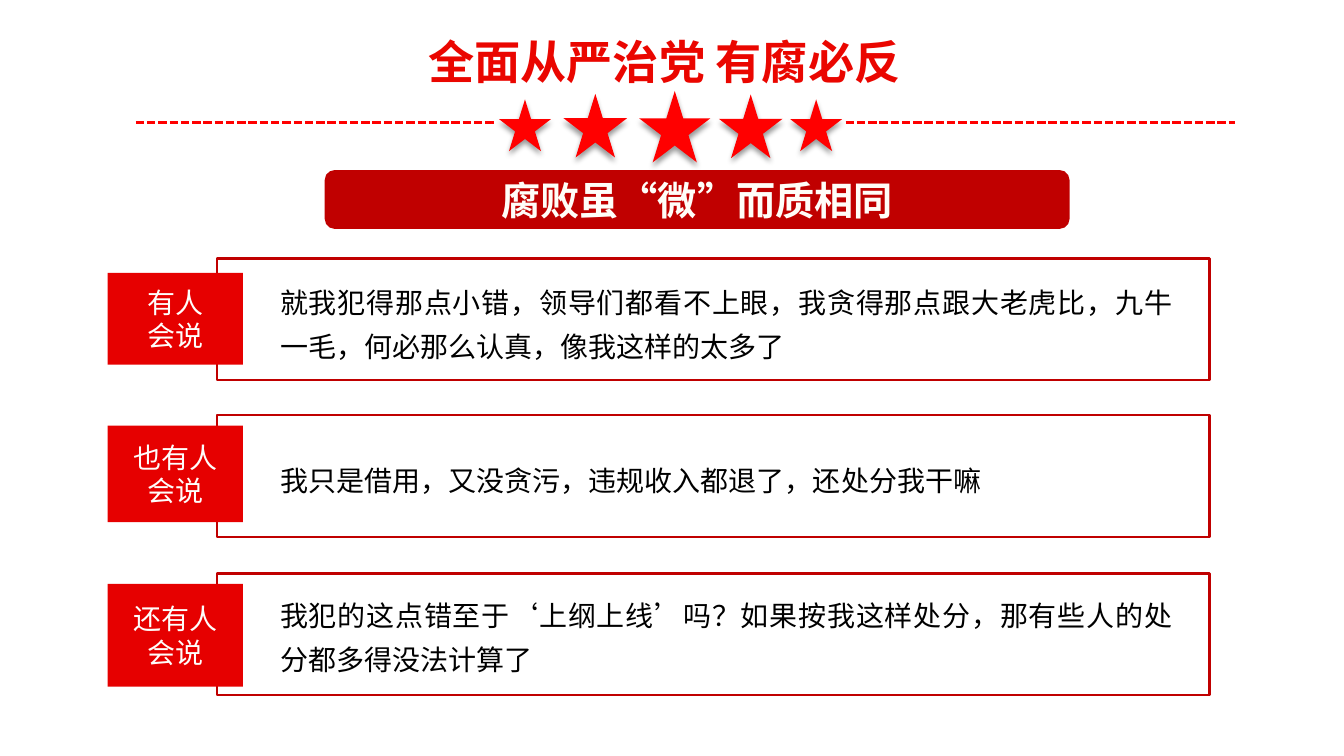
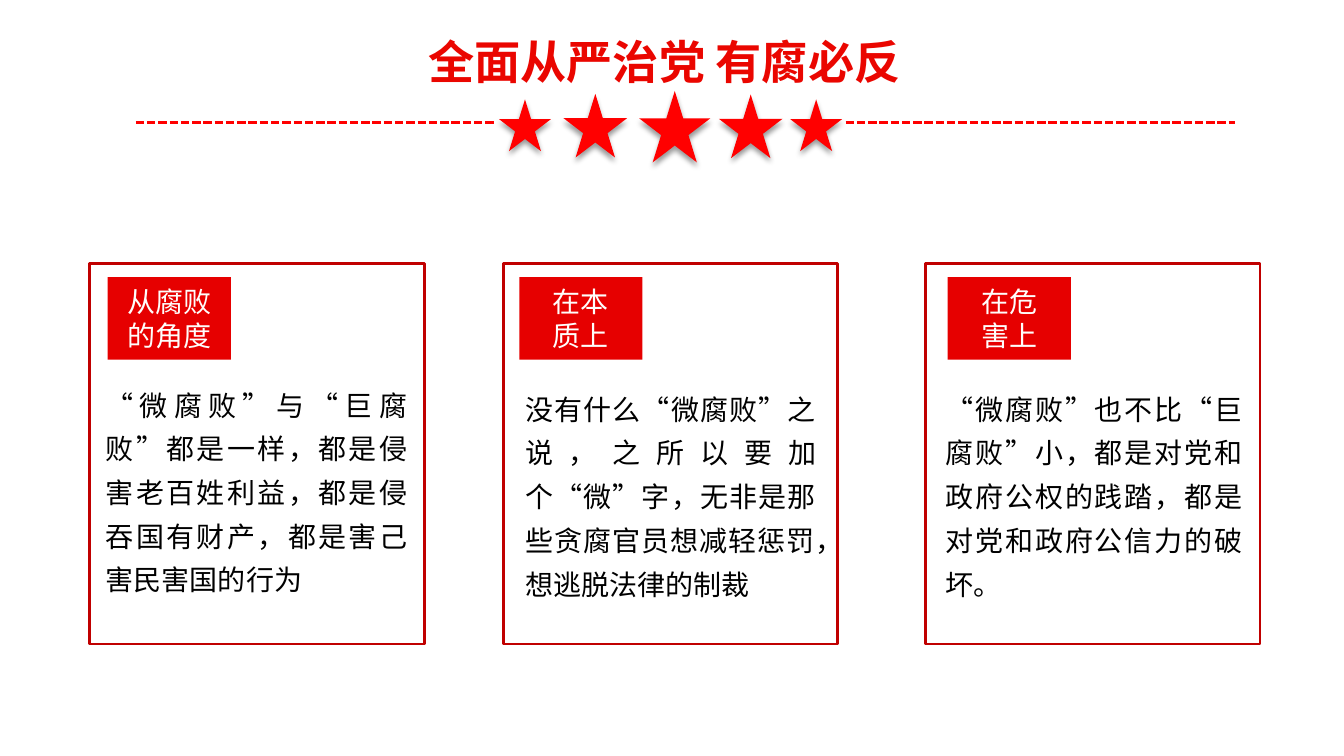
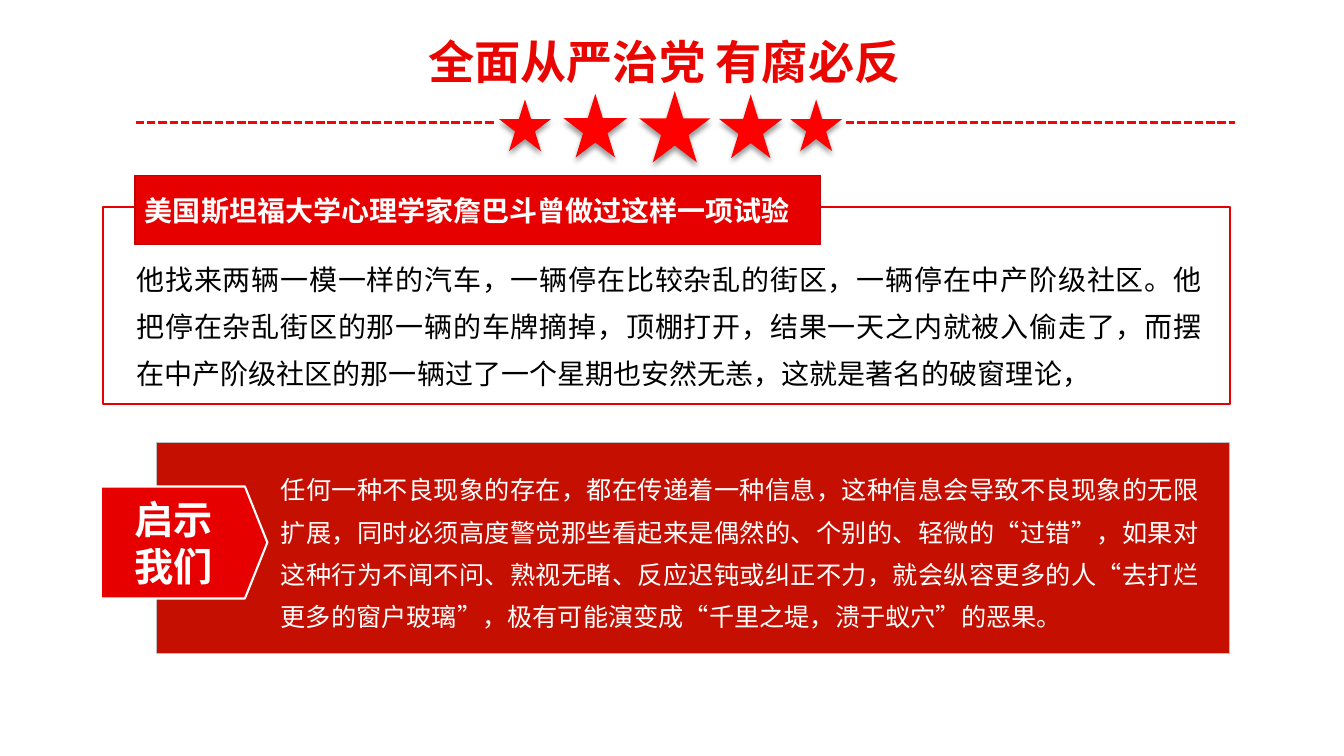
from pptx import Presentation
from pptx.util import Pt
from pptx.dml.color import RGBColor
from pptx.enum.dml import MSO_LINE
from pptx.enum.shapes import MSO_CONNECTOR, MSO_SHAPE as SHAPE
from pptx.enum.text import MSO_ANCHOR as ANCHOR, MSO_AUTO_SIZE as FIT, PP_ALIGN as ALIGN
from pptx.oxml import parse_xml
from pptx.oxml.ns import nsdecls, qn
from pptx.oxml.xmlchemy import OxmlElement

FONT = "Noto Sans CJK SC"
RED, DEEP, STAR, CREAM = "E60000", "C00000", "FF0000", "FFFDFB"
WHITE, BLACK = "FFFFFF", "000000"
LEADING = 1.2
TITLE = "全面从严治党 有腐必反"
TITLE_BOX = (289.5, 20, 370, 47.5)
STARS = [(356.5, 71, 37), (402.5, 67, 45.5), (456.5, 65, 51), (513.5, 67.5, 45.5), (564.5, 71, 37)]
DASHES = [(97, 354), (604, 882.5)]
DASH_Y = 87.75

VIEWS = [
    (184.5, 195, 65.5, 193.5, ["有人", "会说"],
     "就我犯得那点小错，领导们都看不上眼，我贪得那点跟大老虎比，九牛一毛，何必那么认真，像我这样的太多了"),
    (296.5, 304, 69, 320.5, ["也有人", "会说"],
     "我只是借用，又没贪污，违规收入都退了，还处分我干嘛"),
    (409.5, 417, 73.5, 417, ["还有人", "会说"],
     "我犯的这点错至于‘上纲上线’吗？如果按我这样处分，那有些人的处分都多得没法计算了"),
]
ASPECTS = [
    (64, 13, 4.5, 78, 229.5, ["从腐败的角度"],
     "“微腐败”与“巨腐败”都是一样，都是侵害老百姓利益，都是侵吞国有财产，都是害己害民害国的行为"),
    (359.5, 11.5, 8.5, 81, 222, ["在本", "质上"],
     "没有什么“微腐败”之说，之所以要加个“微”字，无非是那些贪腐官员想减轻惩罚，想逃脱法律的制裁"),
    (661, 16, 7.5, 81, 226, ["在危", "害上"],
     "“微腐败”也不比“巨腐败”小，都是对党和政府公权的践踏，都是对党和政府公信力的破坏。"),
]
TRIAL_HEAD = "美国斯坦福大学心理学家詹巴斗曾做过这样一项试验"
TRIAL = ("他找来两辆一模一样的汽车，一辆停在比较杂乱的街区，一辆停在中产阶级社区。"
         "他把停在杂乱街区的那一辆的车牌摘掉，顶棚打开，结果一天之内就被入偷走了，"
         "而摆在中产阶级社区的那一辆过了一个星期也安然无恙，这就是著名的破窗理论，")
LESSON = ("任何一种不良现象的存在，都在传递着一种信息，这种信息会导致不良现象的无限扩展，"
          "同时必须高度警觉那些看起来是偶然的、个别的、轻微的“过错”，"
          "如果对这种行为不闻不问、熟视无睹、反应迟钝或纠正不力，"
          "就会纵容更多的人“去打烂更多的窗户玻璃”，极有可能演变成“千里之堤，溃于蚁穴”的恶果。")


def rgb(color):
    return RGBColor.from_string(color)


def put(target, **values):
    for name, value in values.items():
        setattr(target, name, value)


def write(tf, lines, size, color, bold=False, align=ALIGN.CENTER, spacing=1, anchor=ANCHOR.MIDDLE):
    put(tf, word_wrap=True, auto_size=FIT.NONE, vertical_anchor=anchor,
        margin_left=Pt(7.2), margin_right=Pt(7.2), margin_top=Pt(3.6), margin_bottom=Pt(3.6))
    for i, line in enumerate(lines):
        p = tf.add_paragraph() if i else tf.paragraphs[0]
        put(p, alignment=align, line_spacing=Pt(round(size * LEADING * spacing, 1)))
        r = p.add_run()
        r.text = line
        put(r.font, name=FONT, size=Pt(size), bold=bold)
        r.font.color.rgb = rgb(color)
        rPr = r.font._element
        rPr.set("lang", "zh-CN")
        ea = OxmlElement("a:ea")
        ea.set("typeface", FONT)
        rPr.find(qn("a:latin")).addnext(ea)


def add_box(s, box, fill=None, line=None, width=1, kind=SHAPE.RECTANGLE):
    sp = s.shapes.add_shape(kind, *map(Pt, box))
    if fill:
        sp.fill.solid()
        sp.fill.fore_color.rgb = rgb(fill)
    else:
        sp.fill.background()
    if line:
        sp.line.color.rgb = rgb(line)
        sp.line.width = Pt(width)
    else:
        sp.line.fill.background()
    sp.shadow.inherit = False
    return sp


def add_prose(s, box, text, size=20, color=BLACK, spacing=1.3):
    tb = s.shapes.add_textbox(*map(Pt, box))
    write(tb.text_frame, [text], size, color, align=ALIGN.JUSTIFY, spacing=spacing, anchor=ANCHOR.TOP)


def add_badge(s, box, lines):
    write(add_box(s, box, RED).text_frame, lines, 20, CREAM)


def add_star(s, x, y, size):
    sp = add_box(s, (x, y, size, size), STAR, kind=SHAPE.STAR_5_POINT)
    sp.element.spPr.find(qn("a:effectLst")).append(parse_xml(
        f'<a:outerShdw {nsdecls("a")} blurRad="50800" dist="38100" dir="5400000" rotWithShape="0">'
        '<a:srgbClr val="000000"><a:alpha val="40000"/></a:srgbClr></a:outerShdw>'))
    return sp


def add_dashes(s, x1, x2):
    cn = s.shapes.add_connector(MSO_CONNECTOR.STRAIGHT, Pt(x1), Pt(DASH_Y), Pt(x2), Pt(DASH_Y))
    put(cn.line, width=Pt(2), dash_style=MSO_LINE.SQUARE_DOT)
    cn.line.color.rgb = rgb(STAR)
    cn.element.spPr.append(OxmlElement("a:effectLst"))
    return cn


def dress_layout(layout, s):
    for ph in list(layout.placeholders):
        if ph.placeholder_format.idx:
            ph.element.getparent().remove(ph.element)
        else:
            put(ph, **dict(zip(("left", "top", "width", "height"), map(Pt, TITLE_BOX))))
    band = [add_dashes(s, *ends) for ends in DASHES] + [add_star(s, *star) for star in STARS]
    for sp in band:
        layout.shapes.element.append(sp.element)


def add_title(s):
    write(s.shapes.title.text_frame, [TITLE], 33, "EA0600", bold=True)


def views_slide(s):
    banner = add_box(s, (232, 121.5, 532, 42), DEEP, kind=SHAPE.ROUNDED_RECTANGLE)
    write(banner.text_frame, ["腐败虽“微”而质相同"], 28, "FFFDF8", bold=True)
    for top, badge_top, badge_height, text_top, label, text in VIEWS:
        add_box(s, (155, top, 709, 87), line=DEEP, width=1.75)
        add_prose(s, (193, text_top, 651.5, 70), text)
        add_badge(s, (77, badge_top, 96.5, badge_height), label)


def aspects_slide(s):
    top = 188.5
    for left, badge_dx, text_dx, text_dy, text_width, label, text in ASPECTS:
        add_box(s, (left, top, 239, 271.5), line=DEEP, width=2)
        add_badge(s, (left + badge_dx, top + 9.5, 88, 59), label)
        add_prose(s, (left + text_dx, top + text_dy, text_width, 164), text)


def trial_panel(s, x, y, w, h):
    add_box(s, (x, y, w, h), line=RED, width=1.5)
    head = add_box(s, (x + 23, y - 22.5, 489.5, 49), RED, DEEP)
    write(head.text_frame, [TRIAL_HEAD], 20, WHITE, bold=True, align=ALIGN.LEFT)
    add_prose(s, (x + 17, y + 26.5, w - 30, 109), TRIAL, spacing=1.4)


def lesson_panel(s, x, y, w, h):
    add_box(s, (x, y, w, h), "C50F00", "BFBFBF", 0.75)
    tag = add_box(s, (x - 40, y + 31.5, 119, 80), RED, WHITE, 1.5, SHAPE.PENTAGON)
    tag.adjustments[0] = 0.2
    write(tag.text_frame, ["启示", "我们"], 28, WHITE, bold=True)
    tag.text_frame.margin_right = Pt(14)
    add_prose(s, (x + 81.5, y + 11, 670, 127), LESSON, 18, WHITE, 1.4)


def experiment_slide(s):
    trial_panel(s, 73.5, 148, 805, 140.5)
    lesson_panel(s, 112, 316, 766, 151)


def main():
    prs = Presentation()
    put(prs, slide_width=Pt(960), slide_height=Pt(540))
    layout = prs.slide_layouts[5]
    for i, build in enumerate((views_slide, aspects_slide, experiment_slide)):
        s = prs.slides.add_slide(layout)
        if i == 0:
            dress_layout(layout, s)
        add_title(s)
        build(s)
    prs.save("out.pptx")


if __name__ == "__main__":
    main()
